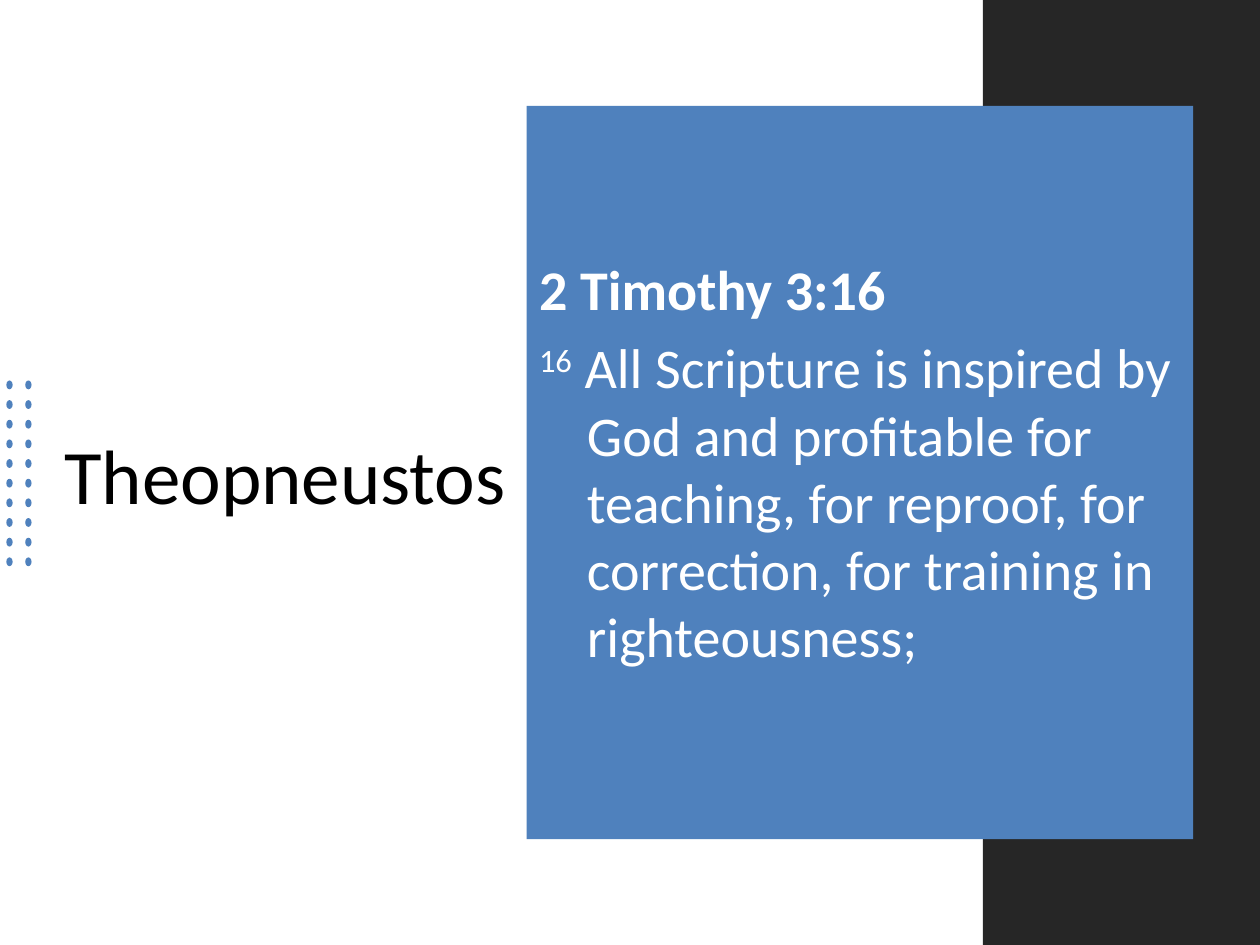
"""Build the Theopneustos slide with its scripture panel."""
from dataclasses import dataclass
from itertools import product

import pptx
import pptx.dml.color
import pptx.enum.shapes
import pptx.enum.text
import pptx.util

Inches = pptx.util.Inches
Pt = pptx.util.Pt
Shape = pptx.enum.shapes.MSO_SHAPE
Align = pptx.enum.text.PP_ALIGN

BLUE, CHARCOAL, WHITE, BLACK = "4F81BD", "262626", "FFFFFF", "000000"
DOT_COLUMNS, DOT_ROWS = 2, 10
DOT_LEFT, DOT_TOP = 0.04, 3.03
DOT_STEP_X, DOT_STEP_Y = 0.15, 0.156


@dataclass
class Box:
    left: float
    top: float
    width: float
    height: float

    def lengths(self) -> list:
        return [Inches(v) for v in (self.left, self.top, self.width, self.height)]


def paint(color_format, color: str) -> None:
    color_format.rgb = pptx.dml.color.RGBColor.from_string(color)


def add_block(slide, kind, box: Box, color: str, rotation: float = 0) -> None:
    block = slide.shapes.add_shape(kind, *box.lengths())
    block.shadow.inherit = False
    block.rotation = rotation
    block.fill.solid()
    paint(block.fill.fore_color, color)
    block.line.fill.background()


def add_text_frame(slide, box: Box):
    frame = slide.shapes.add_textbox(*box.lengths()).text_frame
    frame.word_wrap = True
    frame.vertical_anchor = pptx.enum.text.MSO_ANCHOR.MIDDLE
    return frame


def style(paragraph, size: float, color: str, align, bold: bool = False) -> None:
    paragraph.alignment = align
    paragraph.font.name = "Calibri"
    paragraph.font.size = Pt(size)
    paragraph.font.bold = bold
    paint(paragraph.font.color, color)


def hang(paragraph, indent: float) -> None:
    properties = paragraph._p.get_or_add_pPr()
    properties.set("marL", str(Inches(indent)))
    properties.set("indent", str(-Inches(indent)))


def add_title(slide) -> None:
    title = add_text_frame(slide, Box(0.35, 1.14, 3.83, 5.24)).paragraphs[0]
    title.text = "Theopneustos"
    style(title, 44, BLACK, Align.CENTER)


def add_scripture(slide) -> None:
    scripture = add_text_frame(slide, Box(4.18, 1.29, 5.29, 4.97))
    scripture.margin_bottom = Inches(0.27)
    reference = scripture.paragraphs[0]
    reference.text = "2 Timothy 3:16"
    verse = scripture.add_paragraph()
    verse.space_before = Pt(6.4)
    verse_number = verse.add_run()
    verse_number.text = "16"
    verse_number.font._element.set("baseline", "30000")
    verse.add_run().text = (
        " All Scripture is inspired by God and profitable for teaching, "
        "for reproof, for correction, for training in righteousness;"
    )
    for paragraph in (reference, verse):
        hang(paragraph, 0.38)
        style(paragraph, 32, WHITE, Align.LEFT, bold=paragraph is reference)


def main() -> None:
    deck = pptx.Presentation()
    deck.slide_width, deck.slide_height = Inches(10), Inches(7.5)
    slide = deck.slides.add_slide(deck.slide_layouts[6])
    add_title(slide)
    for row, column in product(range(DOT_ROWS), range(DOT_COLUMNS)):
        dot = Box(DOT_LEFT + column * DOT_STEP_X, DOT_TOP + row * DOT_STEP_Y, 0.07, 0.05)
        add_block(slide, Shape.OVAL, dot, BLUE, rotation=90)
    add_block(slide, Shape.RECTANGLE, Box(7.8, 0, 2.2, 7.5), CHARCOAL)
    add_block(slide, Shape.RECTANGLE, Box(4.18, 0.84, 5.29, 5.82), BLUE)
    add_scripture(slide)
    deck.save("out.pptx")


if __name__ == "__main__":
    main()
